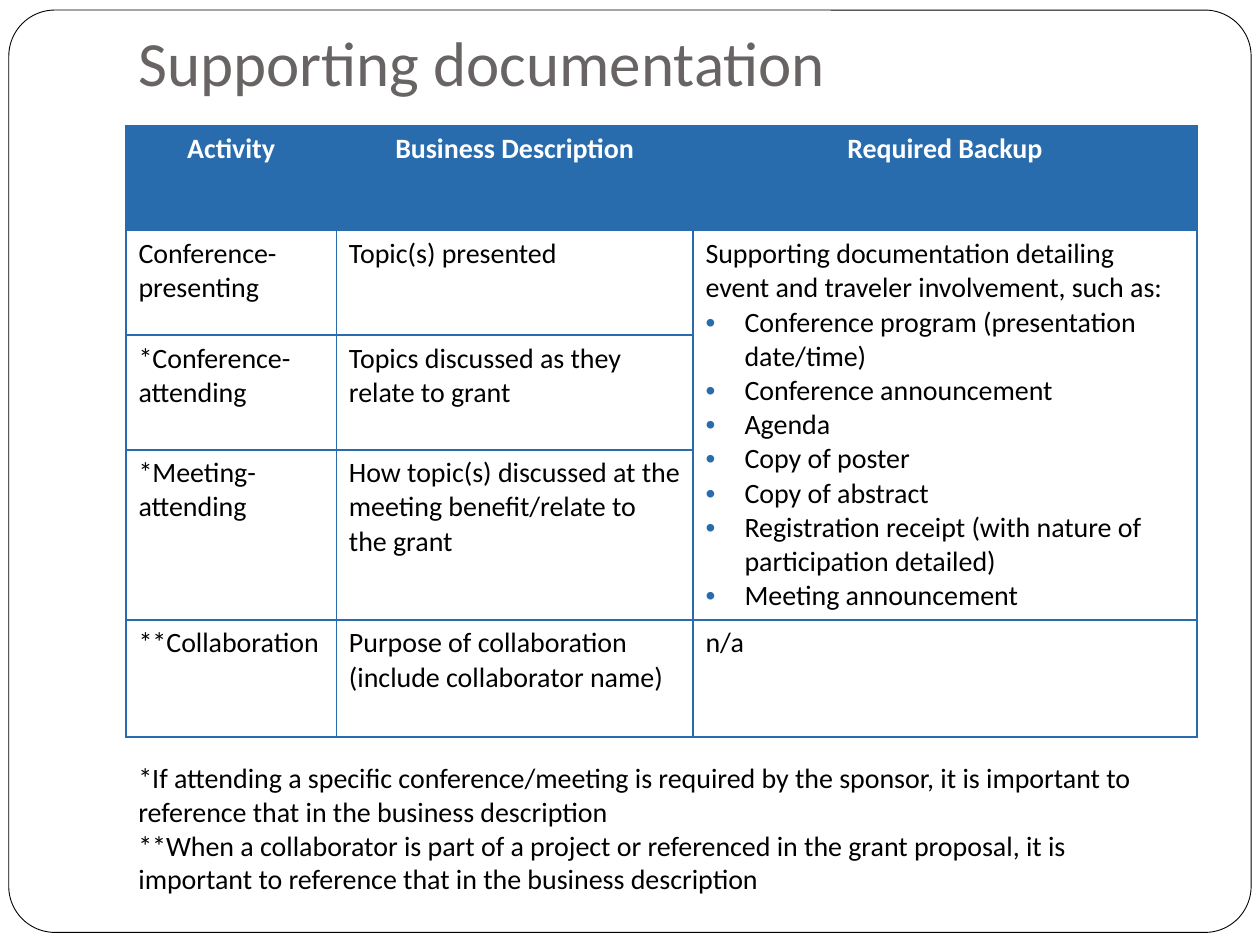
"""Build the supporting documentation slide with its table and footnotes."""
from dataclasses import dataclass

from lxml import etree
from pptx import Presentation
from pptx.dml.color import RGBColor
from pptx.enum.shapes import MSO_SHAPE
from pptx.enum.text import MSO_ANCHOR, PP_ALIGN
from pptx.oxml.ns import qn
from pptx.util import Inches, Pt

ROUNDED = MSO_SHAPE.ROUNDED_RECTANGLE
TOP, BOTTOM = MSO_ANCHOR.TOP, MSO_ANCHOR.BOTTOM
LEFT, CENTER = PP_ALIGN.LEFT, PP_ALIGN.CENTER
FONT = "Calibri"
BLUE, WHITE, BLACK, GRAY = "286CAE", "FFFFFF", "000000", "696464"
MARGIN, CONTENT_WIDTH = 1, 8.5
BULLET_INDENT = 0.31
COLUMN_WIDTHS = (1.67, 2.83, 4)
ROW_HEIGHTS = (0.83, 0.83, 0.91, 1.35, 0.93)


@dataclass(frozen=True)
class Line:
    text: str
    size: int = 16
    color: str = BLACK
    bold: bool = False
    align: PP_ALIGN = LEFT
    bullet: bool = False


@dataclass(frozen=True)
class Activity:
    name: tuple[str, ...]
    description: str


HEADERS = ("Activity", "Business Description", "Required Backup")
ACTIVITIES = (
    Activity(("Conference-", "presenting"), "Topic(s) presented"),
    Activity(("*Conference-", "attending"), "Topics discussed as they relate to grant"),
    Activity(("*Meeting-attending",),
             "How topic(s) discussed at the meeting benefit/relate to the grant"),
    Activity(("**Collaboration",), "Purpose of collaboration (include collaborator name)"),
)
BACKUP_INTRO = "Supporting documentation detailing event and traveler involvement, such as:"
BACKUP_EXAMPLES = (
    "Conference program (presentation date/time)",
    "Conference announcement",
    "Agenda",
    "Copy of poster",
    "Copy of abstract",
    "Registration receipt (with nature of participation detailed)",
    "Meeting announcement",
)
FOOTNOTES = (
    "*If attending a specific conference/meeting is required by the sponsor, "
    "it is important to reference that in the business description",
    "**When a collaborator is part of a project or referenced in the grant proposal, "
    "it is important to reference that in the business description",
)


def rgb(value: str) -> RGBColor:
    """Turn a hex string into a colour."""
    return RGBColor.from_string(value)


def add_bullet(paragraph) -> None:
    """Give a paragraph a blue hanging bullet."""
    properties = paragraph._p.get_or_add_pPr()
    indent = Inches(BULLET_INDENT)
    properties.set("marL", str(indent))
    properties.set("indent", str(-indent))
    color = etree.SubElement(properties, qn("a:buClr"))
    etree.SubElement(color, qn("a:srgbClr"), val=BLUE)
    etree.SubElement(properties, qn("a:buFont"), typeface="Arial")
    etree.SubElement(properties, qn("a:buChar"), char="•")


def write_lines(frame, lines: list[Line]) -> None:
    """Write each line as one paragraph of a text frame."""
    frame.word_wrap = True
    for index, line in enumerate(lines):
        paragraph = frame.add_paragraph() if index else frame.paragraphs[0]
        paragraph.alignment = line.align
        if line.bullet:
            add_bullet(paragraph)
        run = paragraph.add_run()
        run.text = line.text
        run.font.name = FONT
        run.font.size = Pt(line.size)
        run.font.bold = line.bold
        run.font.color.rgb = rgb(line.color)


def add_text(slide, top: float, height: float, lines: list[Line],
             anchor: MSO_ANCHOR = TOP, bottom_inset: float = 0.05) -> None:
    """Add a text box across the content width."""
    box = slide.shapes.add_textbox(
        Inches(MARGIN), Inches(top), Inches(CONTENT_WIDTH), Inches(height))
    box.text_frame.vertical_anchor = anchor
    box.text_frame.margin_bottom = Inches(bottom_inset)
    write_lines(box.text_frame, lines)


def add_frame(slide) -> None:
    """Add the rounded outline around the slide."""
    frame = slide.shapes.add_shape(
        ROUNDED, Inches(0.07), Inches(0.08), Inches(9.86), Inches(7.32))
    frame.adjustments[0] = 0.05
    frame.shadow.inherit = False
    frame.fill.solid()
    frame.fill.fore_color.rgb = rgb(WHITE)
    frame.line.color.rgb = rgb(BLACK)
    frame.line.width = Pt(0.5)


def style_cell(cell, is_header: bool) -> None:
    """Set the borders and fill of a cell."""
    properties = cell._tc.get_or_add_tcPr()
    for side in ("L", "R", "T", "B"):
        border = etree.SubElement(properties, qn(f"a:ln{side}"), w=str(Pt(1)))
        fill = etree.SubElement(border, qn("a:solidFill"))
        etree.SubElement(fill, qn("a:srgbClr"), val=BLUE)
    if is_header:
        cell.fill.solid()
        cell.fill.fore_color.rgb = rgb(BLUE)
    else:
        cell.fill.background()


def add_activity_table(slide) -> None:
    """Add the table of activities and their required backup."""
    table = slide.shapes.add_table(
        len(ROW_HEIGHTS), len(COLUMN_WIDTHS), Inches(MARGIN), Inches(1),
        Inches(CONTENT_WIDTH), Inches(sum(ROW_HEIGHTS))).table
    table.first_row = table.horz_banding = False
    for column, width in zip(table.columns, COLUMN_WIDTHS):
        column.width = Inches(width)
    for row_index, (row, height) in enumerate(zip(table.rows, ROW_HEIGHTS)):
        row.height = Inches(height)
        for cell in row.cells:
            style_cell(cell, is_header=row_index == 0)
    table.cell(1, 2).merge(table.cell(3, 2))

    for column_index, header in enumerate(HEADERS):
        write_lines(table.cell(0, column_index).text_frame,
                    [Line(header, color=WHITE, bold=True, align=CENTER)])
    for row_index, activity in enumerate(ACTIVITIES, start=1):
        write_lines(table.cell(row_index, 0).text_frame,
                    [Line(part) for part in activity.name])
        write_lines(table.cell(row_index, 1).text_frame, [Line(activity.description)])
    examples = [Line(example, bullet=True) for example in BACKUP_EXAMPLES]
    write_lines(table.cell(1, 2).text_frame, [Line(BACKUP_INTRO), *examples])
    write_lines(table.cell(4, 2).text_frame, [Line("n/a")])


def main() -> None:
    """Build and save the slide."""
    presentation = Presentation()
    presentation.slide_width, presentation.slide_height = Inches(10), Inches(7.5)
    slide = presentation.slides.add_slide(presentation.slide_layouts[6])
    add_frame(slide)
    add_text(slide, 0.17, 0.72, [Line("Supporting documentation", size=36, color=GRAY)],
             anchor=BOTTOM, bottom_inset=0.1)
    add_activity_table(slide)
    add_text(slide, 5.99, 1.18, [Line(note) for note in FOOTNOTES])
    presentation.save("out.pptx")


if __name__ == "__main__":
    main()
